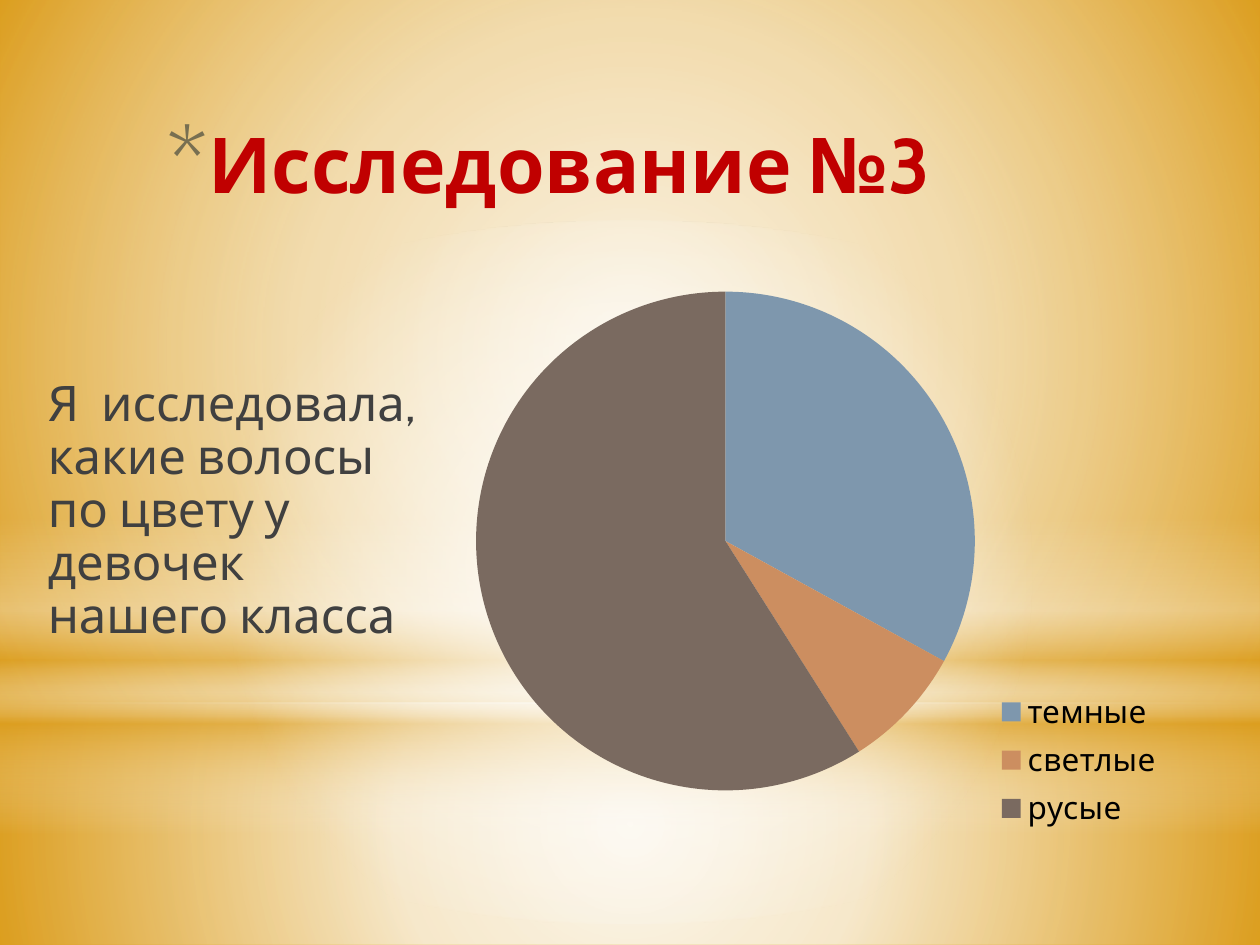
from lxml.etree import SubElement
from pptx import Presentation
from pptx.chart.data import CategoryChartData
from pptx.dml.color import RGBColor
from pptx.enum.chart import XL_CHART_TYPE, XL_LEGEND_POSITION
from pptx.enum.shapes import MSO_SHAPE
from pptx.enum.text import MSO_ANCHOR, MSO_AUTO_SIZE, PP_ALIGN
from pptx.oxml import parse_xml
from pptx.oxml.ns import nsdecls, qn
from pptx.util import Inches, Pt

GOLD = RGBColor(0xDC, 0x9E, 0x1F)
WHITE = RGBColor(0xFF, 0xFF, 0xFF)
RED = RGBColor(0xC0, 0x00, 0x00)
OLIVE = RGBColor(0x78, 0x6F, 0x51)
GREY = RGBColor(0x40, 0x40, 0x40)
BLACK = RGBColor(0x00, 0x00, 0x00)
HAIR = [
    ("темные", 33, RGBColor(0x7E, 0x97, 0xAD)),
    ("светлые", 8, RGBColor(0xCC, 0x8E, 0x60)),
    ("русые", 59, RGBColor(0x7A, 0x6A, 0x60)),
]
FONT = "Cabin"
CIRCLE = ('<a:path path="circle"><a:fillToRect l="50000" t="50000" '
          'r="50000" b="50000"/></a:path>')
DOWN = '<a:lin ang="5400000" scaled="0"/>'
GLOWS = [
    (MSO_SHAPE.RECTANGLE, 5.58, 1.92, CIRCLE,
     [(0, WHITE, 91), (37, WHITE, 76), (100, GOLD, 79)]),
    (MSO_SHAPE.RECTANGLE, 0, 5.58, CIRCLE,
     [(0, WHITE, 89), (48, WHITE, 62), (100, GOLD, 79)]),
    (MSO_SHAPE.RECTANGLE, 4.12, 2.5, DOWN,
     [(0, WHITE, 0), (29, WHITE, 30), (45, GOLD, 40),
      (55, WHITE, 26), (65, GOLD, 60), (100, WHITE, 0)]),
    (MSO_SHAPE.OVAL, 1.75, 5.58, CIRCLE, [(0, WHITE, 100), (56, WHITE, 0)]),
]


def place(shape, left, top, width, height):
    shape.left, shape.top = Inches(left), Inches(top)
    shape.width, shape.height = Inches(width), Inches(height)


def manual_layout(x, y, width, height, target=""):
    return parse_xml(
        f'<c:layout {nsdecls("c")}><c:manualLayout>{target}'
        '<c:xMode val="edge"/><c:yMode val="edge"/>'
        f'<c:x val="{x}"/><c:y val="{y}"/><c:w val="{width}"/><c:h val="{height}"/>'
        '</c:manualLayout></c:layout>')


deck = Presentation()
deck.slide_width, deck.slide_height = Inches(10), Inches(7.5)
page = deck.slides.add_slide(deck.slide_layouts[1])
page.background.fill.solid()
page.background.fill.fore_color.rgb = GOLD
title, body = page.placeholders
tree = title._element.getparent()

for kind, top, height, direction, stops in GLOWS:
    glow = page.shapes.add_shape(kind, 0, Inches(top), deck.slide_width, Inches(height))
    glow.shadow.inherit = False
    glow.line.fill.background()
    marks = "".join(
        f'<a:gs pos="{position * 1000}"><a:srgbClr val="{color}">'
        f'<a:alpha val="{opacity * 1000}"/></a:srgbClr></a:gs>'
        for position, color, opacity in stops)
    glow._element.spPr.find(qn("a:prstGeom")).addnext(parse_xml(
        f'<a:gradFill {nsdecls("a")} rotWithShape="1"><a:gsLst>{marks}</a:gsLst>'
        f'{direction}</a:gradFill>'))

tree.append(title._element)
place(title, 1.22, 0.29, 8.27, 1.42)
title.text_frame.text = "Исследование №3"
title.text_frame.vertical_anchor = MSO_ANCHOR.BOTTOM
title.text_frame.auto_size = MSO_AUTO_SIZE.NONE
para = title.text_frame.paragraphs[0]
para.alignment = PP_ALIGN.LEFT
para.font.name, para.font.size, para.font.bold = FONT, Pt(44), True
para.font.color.rgb = RED
settings = para._p.get_or_add_pPr()
settings.set("marL", str(Inches(0.25)))
settings.set("indent", str(-Inches(0.25)))
bullet = [
    f'<a:buClr {nsdecls("a")}><a:srgbClr val="{OLIVE}"/></a:buClr>',
    f'<a:buSzPct {nsdecls("a")} val="128000"/>',
    f'<a:buFont {nsdecls("a")} typeface="{FONT}"/>',
    f'<a:buChar {nsdecls("a")} char="*"/>',
]
for position, part in enumerate(bullet):
    settings.insert(position, parse_xml(part))

data = CategoryChartData()
data.categories = [name for name, share, color in HAIR]
data.add_series("Series 1", [share for name, share, color in HAIR])
chart = page.shapes.add_chart(
    XL_CHART_TYPE.PIE, Inches(3.66), Inches(1.62), Inches(5.67), Inches(5.35), data).chart
chart.has_title = False
chart.font.name, chart.font.size = FONT, Pt(18)
chart.font.color.rgb = BLACK
chart.has_legend = True
chart.legend.position = XL_LEGEND_POSITION.RIGHT
chart.legend.include_in_layout = False
for index, (name, share, color) in enumerate(HAIR):
    fill = chart.plots[0].series[0].points[index].format.fill
    fill.solid()
    fill.fore_color.rgb = color
plot_area = chart._chartSpace.chart.plotArea
for old in plot_area.findall(qn("c:layout")):
    plot_area.remove(old)
plot_area.insert(0, manual_layout(0.02, 0.13, 0.7, 0.74, '<c:layoutTarget val="inner"/>'))
legend = chart.legend._element
for old in legend.findall(qn("c:layout")):
    legend.remove(old)
legend.find(qn("c:legendPos")).addnext(manual_layout(0.74, 0.71, 0.25, 0.23))

tree.append(body._element)
place(body, 0.28, 2.96, 3.23, 3.39)
body.text_frame.text = "Я  исследовала, какие волосы по цвету у девочек нашего класса"
body.text_frame.auto_size = MSO_AUTO_SIZE.NONE
para = body.text_frame.paragraphs[0]
para.font.name, para.font.size = FONT, Pt(28)
para.font.color.rgb = GREY
para.line_spacing, para.space_after = 0.9, Pt(3)
settings = para._p.get_or_add_pPr()
settings.set("marL", "0")
settings.set("indent", "0")
settings.insert_element_before(
    parse_xml(f'<a:buNone {nsdecls("a")}/>'), "a:tabLst", "a:defRPr", "a:extLst")

deck.save("out.pptx")
